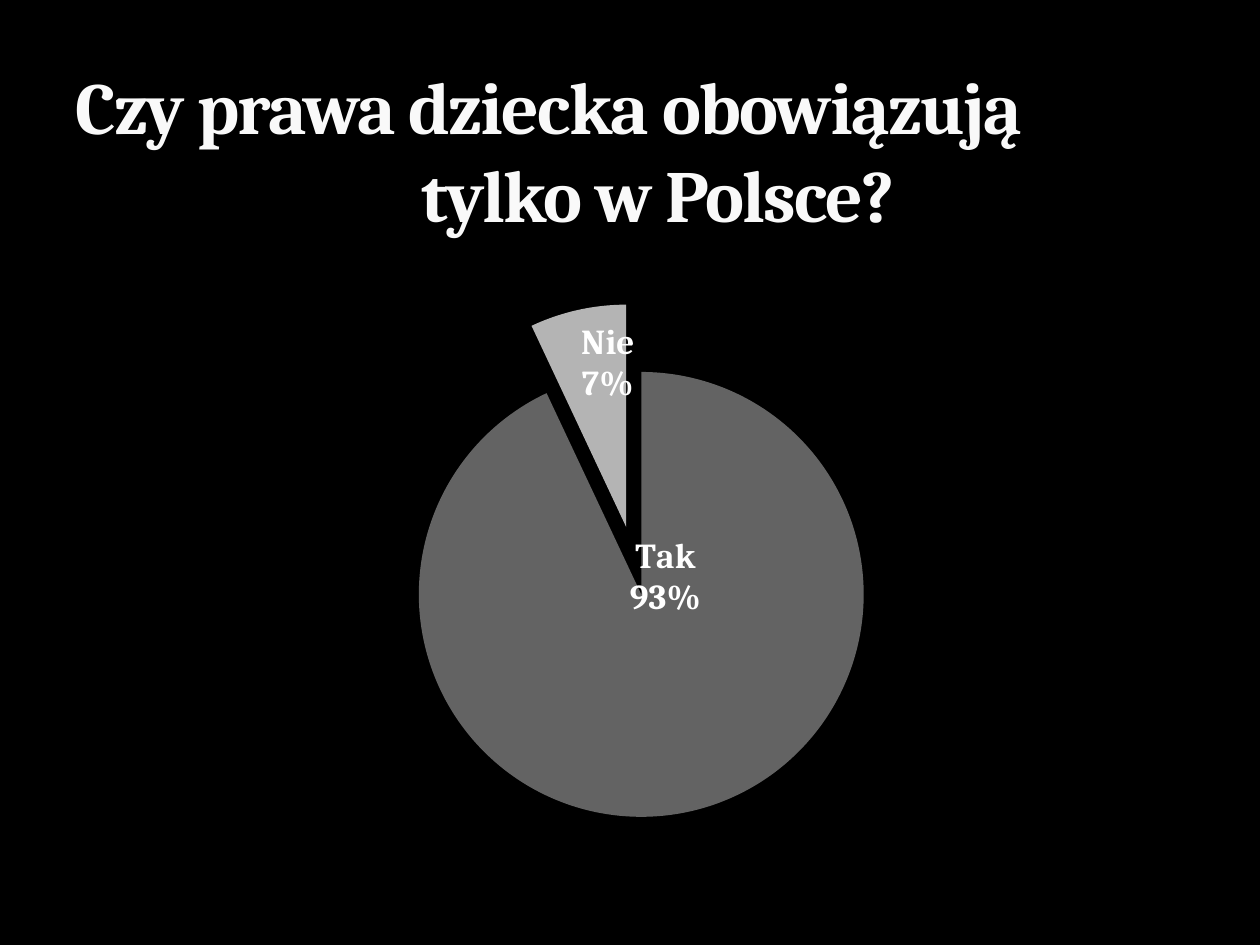
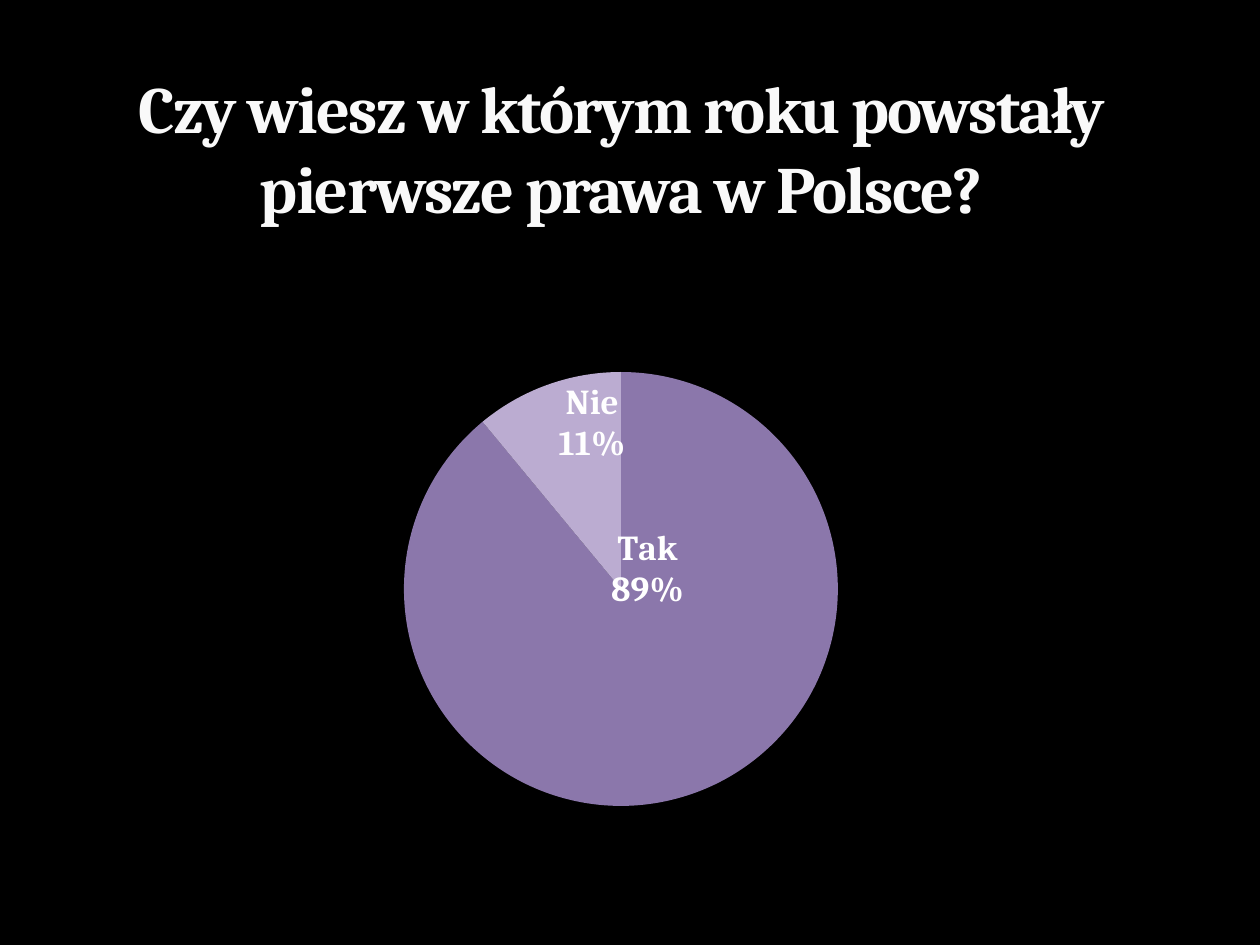
from copy import deepcopy
from dataclasses import dataclass

from lxml import etree
from pptx import Presentation
from pptx.chart.data import CategoryChartData
from pptx.dml.color import RGBColor
from pptx.enum.chart import XL_CHART_TYPE, XL_LABEL_POSITION
from pptx.enum.text import MSO_ANCHOR, MSO_AUTO_SIZE, PP_ALIGN
from pptx.oxml import parse_xml
from pptx.oxml.ns import nsdecls, qn
from pptx.util import Pt

PIE = XL_CHART_TYPE.PIE
MIDDLE = XL_LABEL_POSITION.CENTER
BOTTOM = MSO_ANCHOR.BOTTOM
FIXED = MSO_AUTO_SIZE.NONE
LEFT, CENTER = PP_ALIGN.LEFT, PP_ALIGN.CENTER
TITLE_ONLY = 5
SCALE = 914400 / 126


@dataclass(frozen=True)
class Theme:
    font: str = "Cambria"
    back: str = "000000"
    title: str = "F9F9F9"
    edge: str = "3C4422"
    label: str = "FFFFFF"
    grays: tuple = ("636363", "B4B4B4")
    violets: tuple = ("8B77AB", "BBACD1")
    label_size: float = 20
    big: float = 42
    small: float = 37.8


THEME = Theme()


def px(count):
    return round(count * SCALE)


def rgb(code):
    return RGBColor.from_string(code)


def style(font, size, color, bold=True):
    font.name, font.size, font.bold = THEME.font, Pt(size), bold
    font.color.rgb = rgb(color)


def write(para, text, size, color, align=CENTER, indent=0, track=0, edge=None):
    """Fill a paragraph with one run; indent is in px, track in points."""
    para.alignment = align
    props = para._p.get_or_add_pPr()
    props.set("marL", str(px(indent)))
    props.set("indent", "0")
    run = para.add_run()
    run.text = text
    style(run.font, size, color)
    marks = run.font._element
    marks.set("spc", str(track * 100))
    if edge:
        marks.insert(0, parse_xml(
            f'<a:ln {nsdecls("a")} w="3175"><a:solidFill><a:srgbClr val="{edge}">'
            '<a:alpha val="25000"/></a:srgbClr></a:solidFill></a:ln>'))


def place(shape, box):
    shape.left, shape.top, shape.width, shape.height = map(px, box)


def add_title(slide, box, lines, size, align=CENTER):
    """Each line is a pair of text and left indent."""
    title = slide.shapes.title
    place(title, box)
    frame = title.text_frame
    frame.word_wrap, frame.auto_size = True, FIXED
    frame.vertical_anchor = BOTTOM
    for order, (text, indent) in enumerate(lines):
        para = frame.add_paragraph() if order else frame.paragraphs[0]
        write(para, text, size, THEME.title, align=align, indent=indent,
              track=-1, edge=THEME.edge)


def layout(box, **parts):
    """Manual chart layout; x and w are shares of the box width, y and h of its height."""
    sides = {"x": box[2], "w": box[2], "y": box[3], "h": box[3]}
    node = etree.Element(qn("c:layout"))
    manual = etree.SubElement(node, qn("c:manualLayout"))
    if "w" in parts:
        etree.SubElement(manual, qn("c:layoutTarget")).set("val", "inner")
        for mode in ("c:xMode", "c:yMode"):
            etree.SubElement(manual, qn(mode)).set("val", "edge")
    for name, count in parts.items():
        share = round(count / sides[name], 4)
        etree.SubElement(manual, qn("c:" + name)).set("val", str(share))
    return node


def add_labels(series, box, shifts):
    """Show name and share on each slice, moved by its shift in px."""
    labels = series.data_labels
    labels.show_value = False
    labels.show_category_name = labels.show_percentage = True
    labels.number_format, labels.number_format_is_linked = "0%", False
    labels.position = MIDDLE
    style(labels.font, THEME.label_size, THEME.label)
    group = labels._element
    for lead in group.findall(qn("c:showLeaderLines")):
        group.remove(lead)
    etree.SubElement(group, qn("c:separator")).text = "\n"
    shared = list(group)
    for order, (across, down) in enumerate(shifts):
        label = etree.Element(qn("c:dLbl"))
        etree.SubElement(label, qn("c:idx")).set("val", str(order))
        label.append(layout(box, x=across, y=down))
        label.extend(deepcopy(part) for part in shared)
        group.insert(order, label)
    etree.SubElement(group, qn("c:showLeaderLines")).set("val", "0")


def add_pie(slide, box, values, colors, plot, shifts, size, bursts=()):
    """plot is left, top and side of the pie area, relative to the box."""
    data = CategoryChartData()
    data.categories = ["Tak", "Nie"]
    data.add_series("Series 1", values)
    chart = slide.shapes.add_chart(PIE, *map(px, box), data).chart
    chart.has_legend = chart.has_title = False
    style(chart.font, size, THEME.label, bold=False)
    chart.plots[0].vary_by_categories = True
    series = chart.plots[0].series[0]
    for order, color in enumerate(colors):
        look = series.points[order].format
        look.fill.solid()
        look.fill.fore_color.rgb = rgb(color)
        look.line.fill.background()
    slices = series._element.findall(qn("c:dPt"))
    for part, burst in zip(slices, bursts):
        node = etree.Element(qn("c:explosion"))
        node.set("val", str(burst))
        part.find(qn("c:spPr")).addprevious(node)
    add_labels(series, box, shifts)
    area = series._element.getparent().getparent()
    for old in area.findall(qn("c:layout")):
        area.remove(old)
    left, top, side = plot
    area.insert(0, layout(box, x=left, y=top, w=side, h=side))


def add_slide(deck):
    slide = deck.slides.add_slide(deck.slide_layouts[TITLE_ONLY])
    fill = slide.background.fill
    fill.solid()
    fill.fore_color.rgb = rgb(THEME.back)
    return slide


def scope_slide(deck):
    slide = add_slide(deck)
    add_title(slide, (63, 21, 1134, 223),
              [("Czy prawa dziecka obowiązują", 0), ("tylko w Polsce?", 346)],
              THEME.big, align=LEFT)
    add_pie(slide, (64, 244, 1134, 630), (93, 7), THEME.grays,
            plot=(352, 115, 445), shifts=[(0, -125), (6, -55)],
            size=18, bursts=(6, 25))


def year_slide(deck):
    slide = add_slide(deck)
    add_title(slide, (54, 66, 1134, 167),
              [("Czy wiesz w którym roku powstały pierwsze prawa w Polsce?", 0)],
              THEME.small)
    add_pie(slide, (54, 275, 1134, 630), (89, 11), THEME.violets,
            plot=(350, 97, 434), shifts=[(-10, -121), (8, -63)], size=10)


def main():
    deck = Presentation()
    deck.slide_width, deck.slide_height = px(1260), px(945)
    scope_slide(deck)
    year_slide(deck)
    deck.save("out.pptx")


if __name__ == "__main__":
    main()
